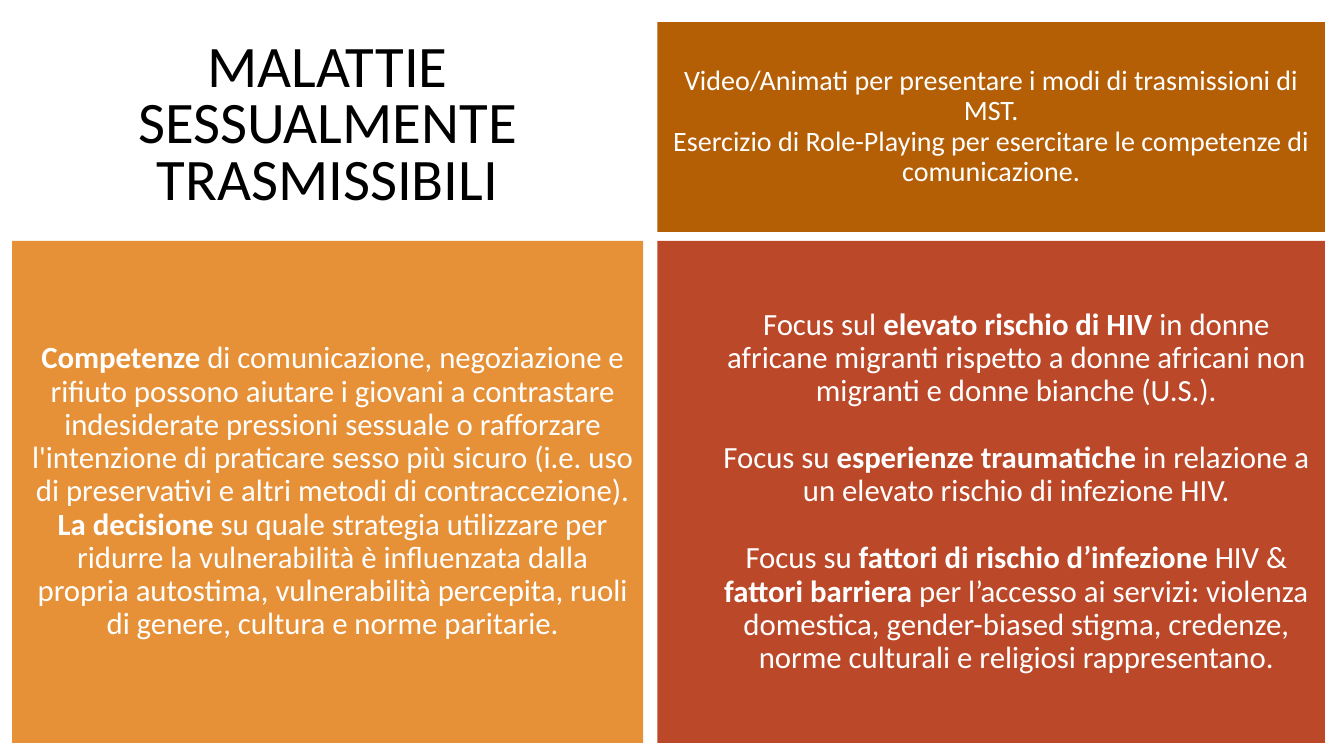
from lxml import etree
from pptx import Presentation
from pptx.dml.color import RGBColor
from pptx.enum.shapes import MSO_SHAPE
from pptx.enum.text import MSO_ANCHOR, PP_ALIGN
from pptx.oxml.ns import qn
from pptx.util import Inches, Pt

RECT = MSO_SHAPE.RECTANGLE
MIDDLE = MSO_ANCHOR.MIDDLE
CENTER = PP_ALIGN.CENTER

TITLE = ["MALATTIE SESSUALMENTE TRASMISSIBILI"]
ACTIVITIES = [
    "Video/Animati per presentare i modi di trasmissioni di MST.",
    "Esercizio di Role-Playing per esercitare le competenze di comunicazione.",
]
SKILLS = [
    "*Competenze* di comunicazione, negoziazione e rifiuto possono aiutare i giovani a "
    "contrastare indesiderate pressioni sessuale o rafforzare l'intenzione di praticare "
    "sesso più sicuro (i.e. uso di preservativi e altri metodi di contraccezione).",
    "*La decisione* su quale strategia utilizzare per ridurre la vulnerabilità è influenzata "
    "dalla propria autostima, vulnerabilità percepita, ruoli di genere, cultura e norme paritarie.",
]
FOCUS = [
    "Focus sul *elevato rischio di HIV* in donne africane migranti rispetto a donne africani "
    "non migranti e donne bianche (U.S.).",
    "Focus su *esperienze traumatiche* in relazione a un elevato rischio di infezione HIV.",
    "Focus su *fattori di rischio d’infezione* HIV & *fattori barriera* per l’accesso ai servizi: "
    "violenza domestica, gender-biased stigma, credenze, norme culturali e religiosi rappresentano.",
]

COLUMNS = [(0.12, 6.26), (6.52, 6.62)]
ROWS = [(0.22, 2.08), (2.39, 4.98)]


def rgb(value):
    return RGBColor.from_string(value)


def cell(column, row):
    left, width = COLUMNS[column]
    top, height = ROWS[row]
    return [Inches(v) for v in (left, top, width, height)]


def add_panel(s, column, row, color, alpha=None):
    sp = s.shapes.add_shape(RECT, *cell(column, row))
    sp.shadow.inherit = False
    sp.fill.solid()
    sp.fill.fore_color.rgb = rgb(color)
    sp.line.fill.background()
    if alpha:
        clr = sp._element.spPr.find(".//" + qn("a:srgbClr"))
        etree.SubElement(clr, qn("a:alpha")).set("val", str(alpha * 1000))
    return sp


def write(sp, paragraphs, size=22, color="FFFFFF", spacing=0.9, indent=0, gap=0, inset=0.1):
    tf = sp.text_frame
    tf.word_wrap = True
    tf.vertical_anchor = MIDDLE
    tf.margin_left = tf.margin_right = Inches(0.1)
    tf.margin_top = tf.margin_bottom = Inches(inset)
    for i, text in enumerate(paragraphs):
        p = tf.add_paragraph() if i else tf.paragraphs[0]
        p.alignment = CENTER
        p.line_spacing = spacing
        p.space_before = Pt(gap if i else 0)
        p._p.get_or_add_pPr().set("marL", str(Inches(indent)))
        for j, part in enumerate(text.split("*")):
            if part:
                r = p.add_run()
                r.text = part
                r.font.name = "Calibri"
                r.font.size = Pt(size)
                r.font.bold = j % 2 == 1
                r.font.color.rgb = rgb(color)


prs = Presentation()
prs.slide_width, prs.slide_height = Inches(13.33), Inches(7.5)
s = prs.slides.add_slide(prs.slide_layouts[6])

write(s.shapes.add_textbox(*cell(0, 0)), TITLE, size=42, color="000000", spacing=0.8, inset=0.05)
write(add_panel(s, 1, 0, "B45F06"), ACTIVITIES, size=20)
write(add_panel(s, 0, 1, "E69138"), SKILLS, indent=0.1)
write(add_panel(s, 1, 1, "B43512", alpha=90), FOCUS, indent=0.5, gap=24)

prs.save("out.pptx")
